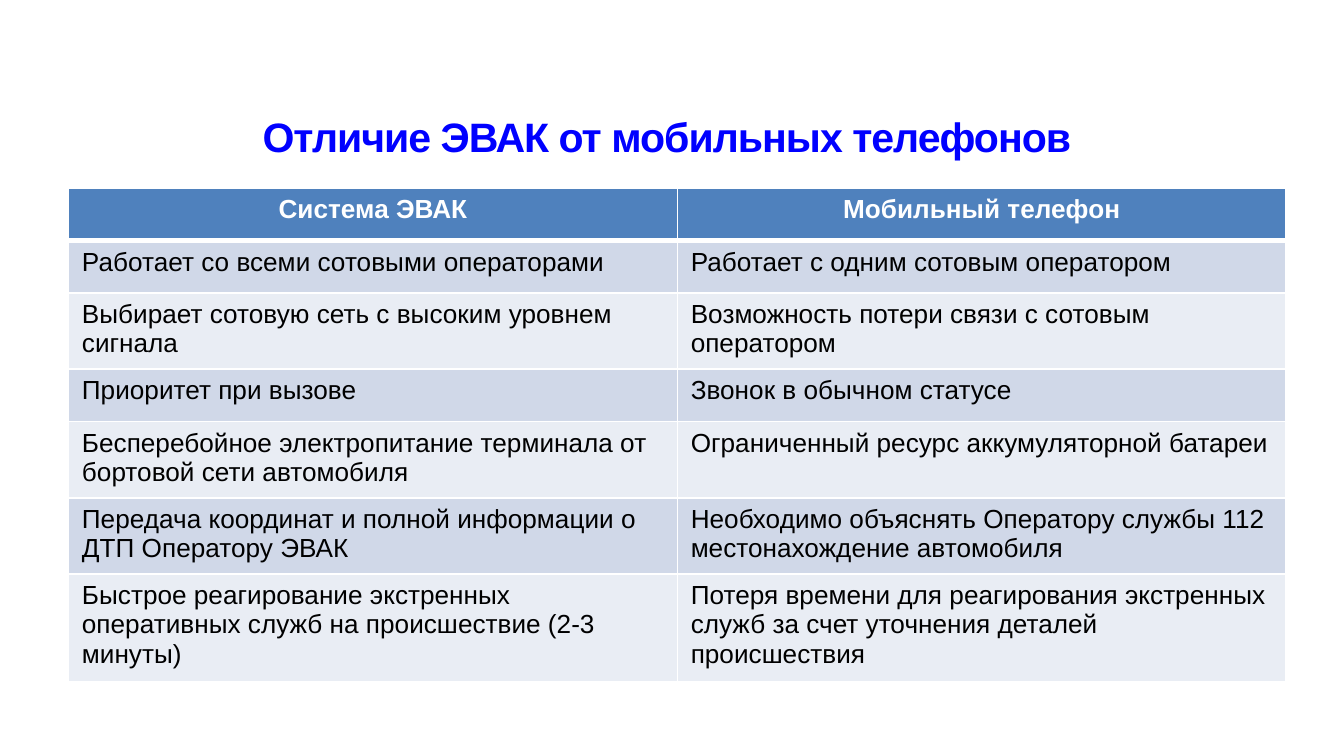
from lxml.etree import SubElement
from pptx import Presentation
from pptx.dml.color import RGBColor
from pptx.enum.text import PP_ALIGN
from pptx.oxml.ns import qn
from pptx.util import Inches, Pt

BLUE = RGBColor(0x00, 0x00, 0xFF)
WHITE = RGBColor(0xFF, 0xFF, 0xFF)
BLACK = RGBColor(0x00, 0x00, 0x00)
HEADER_FILL = RGBColor(0x4F, 0x81, 0xBD)
BAND_FILLS = (RGBColor(0xE9, 0xED, 0xF4), RGBColor(0xD0, 0xD8, 0xE8))
FONT = "Arial"
SLIDE_W = Inches(10)
SLIDE_H = SLIDE_W * 9 // 16

TITLE = "Отличие ЭВАК от мобильных телефонов"
ROWS = [
    ("Система ЭВАК", "Мобильный телефон"),
    ("Работает со всеми сотовыми операторами",
     "Работает с одним сотовым оператором"),
    ("Выбирает сотовую сеть с высоким уровнем сигнала",
     "Возможность потери связи с сотовым оператором"),
    ("Приоритет при вызове", "Звонок в обычном статусе"),
    ("Бесперебойное электропитание терминала от бортовой сети автомобиля",
     "Ограниченный ресурс аккумуляторной батареи"),
    ("Передача координат и полной информации о ДТП Оператору ЭВАК",
     "Необходимо объяснять Оператору службы 112 местонахождение автомобиля"),
    ("Быстрое реагирование экстренных оперативных служб на происшествие (2-3 минуты)",
     "Потеря времени для реагирования экстренных служб за счет уточнения деталей происшествия"),
]


def percent_box(left, top, width, height):
    """Turn percentages of the slide's size into lengths."""
    return (int(SLIDE_W * left / 100), int(SLIDE_H * top / 100),
            int(SLIDE_W * width / 100), int(SLIDE_H * height / 100))


def style_paragraph(p, size, color, bold, align):
    p.alignment = align
    for r in p.runs:
        r.font.name = FONT
        r.font.size = Pt(size)
        r.font.bold = bold
        r.font.color.rgb = color
    SubElement(p._p, qn("a:endParaRPr"), sz=str(size * 100))


def set_borders(cell, top, bottom):
    """Draw white cell borders; must run before the cell gets its fill."""
    tc_pr = cell._tc.get_or_add_tcPr()
    for side, width in (("L", 1), ("R", 1), ("T", top), ("B", bottom)):
        line = SubElement(tc_pr, qn(f"a:ln{side}"), w=str(Pt(width)))
        fill = SubElement(line, qn("a:solidFill"))
        SubElement(fill, qn("a:srgbClr"), val=str(WHITE))


def add_title(s, box):
    tf = s.shapes.add_textbox(*box).text_frame
    tf.word_wrap = True
    tf.text = TITLE
    p = tf.paragraphs[0]
    p.line_spacing = 0.85
    style_paragraph(p, 22, BLUE, True, PP_ALIGN.RIGHT)
    p.runs[0].font._element.set("spc", "-50")


def add_comparison(s, box):
    frame = s.shapes.add_table(len(ROWS), len(ROWS[0]), *box)
    table = frame.table
    for i, texts in enumerate(ROWS):
        header = i == 0
        table.rows[i].height = Inches(0.39)
        for j, text in enumerate(texts):
            cell = table.cell(i, j)
            set_borders(cell, 3 if i == 1 else 1, 3 if header else 1)
            cell.fill.solid()
            cell.fill.fore_color.rgb = HEADER_FILL if header else BAND_FILLS[i % 2]
            cell.text_frame.text = text
            style_paragraph(cell.text_frame.paragraphs[0], 14,
                            WHITE if header else BLACK, header,
                            PP_ALIGN.CENTER if header else PP_ALIGN.LEFT)
    frame.height = box[3]


def main():
    prs = Presentation()
    prs.slide_width, prs.slide_height = SLIDE_W, SLIDE_H
    s = prs.slides.add_slide(prs.slide_layouts[6])
    add_title(s, percent_box(16.1, 14.93, 64.6, 8.36))
    add_comparison(s, percent_box(5.1, 24.89, 90.6, 65.24))
    prs.save("out.pptx")


if __name__ == "__main__":
    main()
